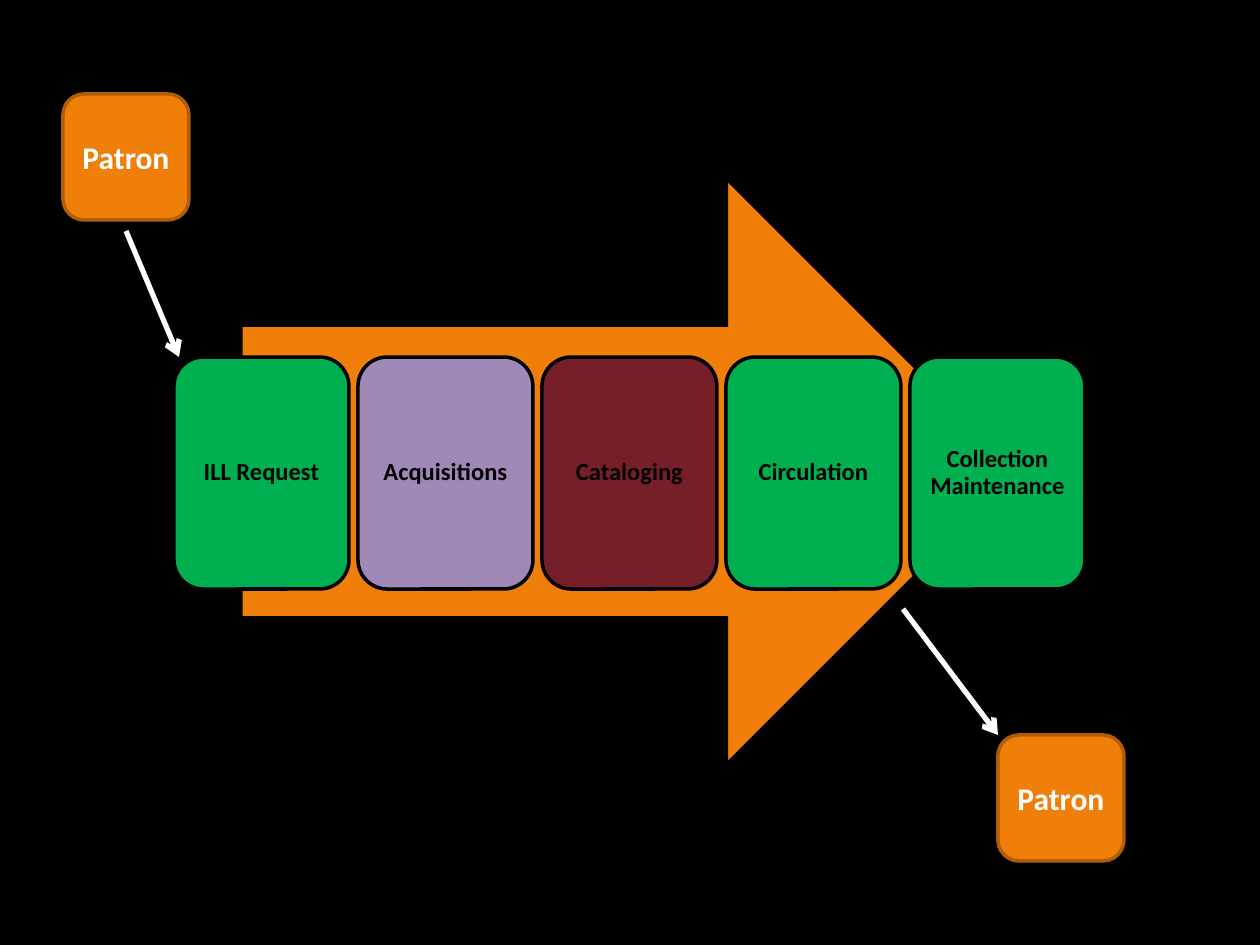
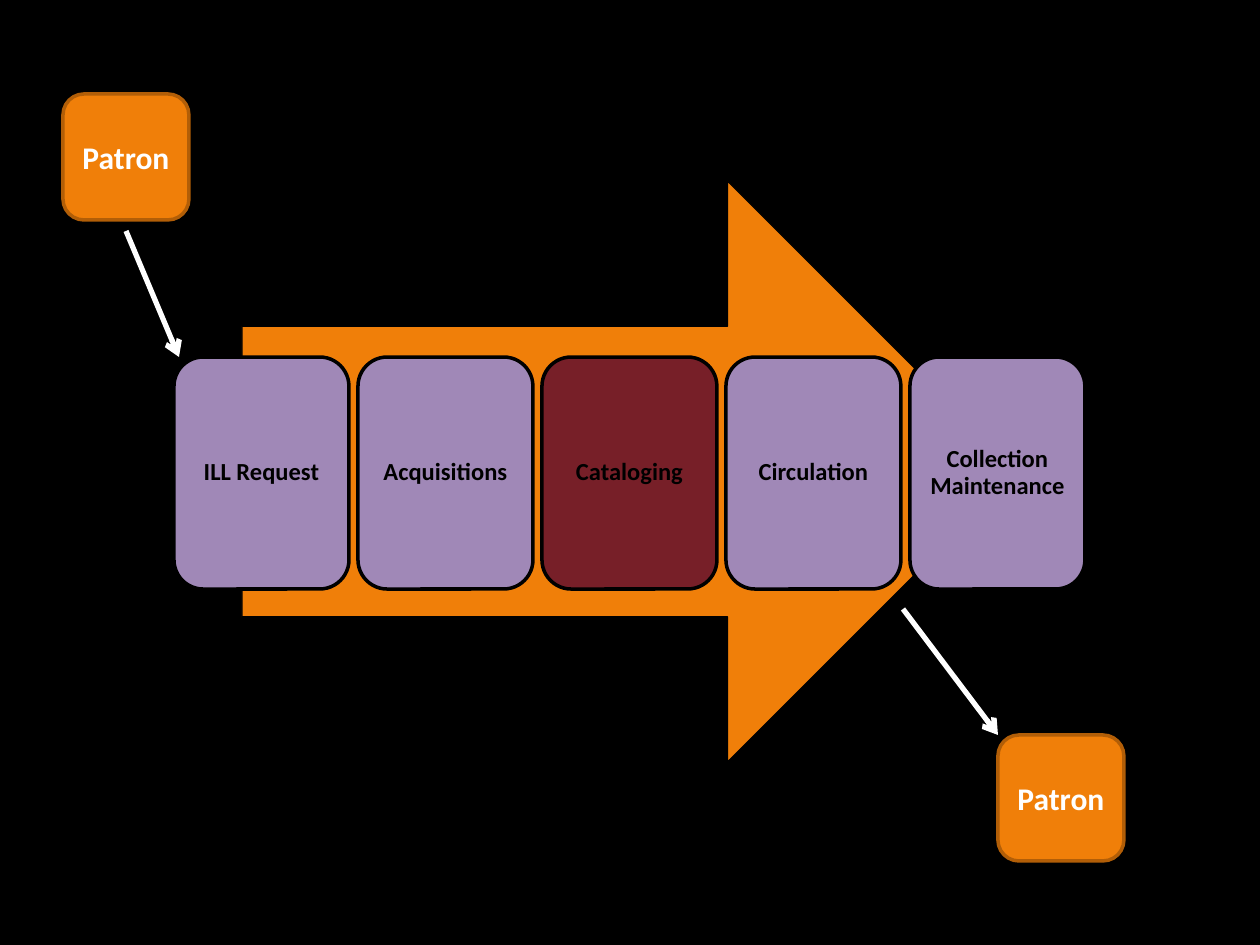
from dataclasses import dataclass

from lxml import etree
from pptx import Presentation
from pptx import util as u
from pptx.dml.color import RGBColor
from pptx.enum import shapes, text
from pptx.oxml import ns

EMU_PER_PX = 914400 / 126


@dataclass(frozen=True)
class Theme:
    """Colours, font and type sizes shared by the slides."""
    black: str = "000000"
    white: str = "FFFFFF"
    orange: str = "F07F09"
    dark_orange: str = "B25E07"
    green: str = "00B050"
    purple: str = "A088B7"
    maroon: str = "771F28"
    font: str = "Calibri"
    stage_size: int = 14
    patron_size: int = 18


THEME = Theme()
STAGES = ["ILL Request", "Acquisitions", "Cataloging", "Circulation", "Collection Maintenance"]
STAGE_COLOURS = [
    [THEME.green, THEME.purple, THEME.maroon, THEME.green, THEME.green],
    [THEME.purple, THEME.purple, THEME.maroon, THEME.purple, THEME.purple],
]
STAGE_LEFT, STAGE_TOP, STAGE_STEP = 174, 357, 184
STAGE_WIDTH, STAGE_HEIGHT = 175, 232
PATRON_SIDE = 126


def px(length):
    """Turn pixels into EMU."""
    return u.Emu(round(length * EMU_PER_PX))


def write_text(shape, words, size, colour, inset=7, line_spacing=1.0):
    """Write bold centred text in a shape."""
    frame = shape.text_frame
    frame.word_wrap = True
    frame.vertical_anchor = text.MSO_ANCHOR.MIDDLE
    frame.margin_left = frame.margin_right = px(inset)
    frame.margin_top = frame.margin_bottom = px(inset)
    paragraph = frame.paragraphs[0]
    paragraph.alignment = text.PP_ALIGN.CENTER
    paragraph.line_spacing = line_spacing
    run = paragraph.add_run()
    run.text = words
    run.font.name = THEME.font
    run.font.size = u.Pt(size)
    run.font.bold = True
    run.font.color.rgb = RGBColor.from_string(colour)


class WorkflowDeck:
    """Holds the theme and the current slide and draws each kind of element."""

    def __init__(self, theme):
        """Start an empty deck."""
        self.theme = theme
        self.presentation = Presentation()
        self.presentation.slide_width = px(1260)
        self.presentation.slide_height = px(945)
        self.slide = None

    def add_slide(self):
        """Add a blank slide with the dark background."""
        self.slide = self.presentation.slides.add_slide(self.presentation.slide_layouts[6])
        fill = self.slide.background.fill
        fill.solid()
        fill.fore_color.rgb = RGBColor.from_string(self.theme.black)

    def block(self, kind, left, top, width, height, fill, line, line_width):
        """Draw a filled and outlined preset shape."""
        shape = self.slide.shapes.add_shape(kind, px(left), px(top), px(width), px(height))
        shape.shadow.inherit = False
        shape.fill.solid()
        shape.fill.fore_color.rgb = RGBColor.from_string(fill)
        shape.line.color.rgb = RGBColor.from_string(line)
        shape.line.width = u.Pt(line_width)
        return shape

    def flow_arrow(self):
        """Draw the wide arrow behind the stages."""
        self.block(shapes.MSO_SHAPE.RIGHT_ARROW, 242, 181, 776, 581,
                   self.theme.orange, self.theme.black, 0.75)

    def stage(self, index, label, colour):
        """Draw one stage of the workflow."""
        shape = self.block(shapes.MSO_SHAPE.ROUNDED_RECTANGLE,
                           STAGE_LEFT + index * STAGE_STEP, STAGE_TOP,
                           STAGE_WIDTH, STAGE_HEIGHT, colour, self.theme.black, 2)
        write_text(shape, label, self.theme.stage_size, self.theme.black, line_spacing=0.9)

    def patron(self, left, top):
        """Draw a patron box."""
        shape = self.block(shapes.MSO_SHAPE.ROUNDED_RECTANGLE, left, top,
                           PATRON_SIDE, PATRON_SIDE,
                           self.theme.orange, self.theme.dark_orange, 2)
        write_text(shape, "Patron", self.theme.patron_size, self.theme.white)

    def link(self, start, end):
        """Draw a white arrow between two points."""
        connector = self.slide.shapes.add_connector(
            shapes.MSO_CONNECTOR.STRAIGHT, *map(px, start + end))
        connector.line.color.rgb = RGBColor.from_string(self.theme.white)
        connector.line.width = u.Pt(3)
        etree.SubElement(connector.line._get_or_add_ln(), ns.qn("a:tailEnd"), type="arrow")
        etree.SubElement(connector._element.spPr, ns.qn("a:effectLst"))


def main():
    """Build the two workflow slides."""
    deck = WorkflowDeck(THEME)
    for colours in STAGE_COLOURS:
        deck.add_slide()
        deck.flow_arrow()
        for index, (label, colour) in enumerate(zip(STAGES, colours)):
            deck.stage(index, label, colour)
        deck.patron(63, 94)
        deck.link((126, 231), (179, 357))
        deck.patron(998, 735)
        deck.link((903, 609), (998, 735))
    deck.presentation.save("out.pptx")


if __name__ == "__main__":
    main()
